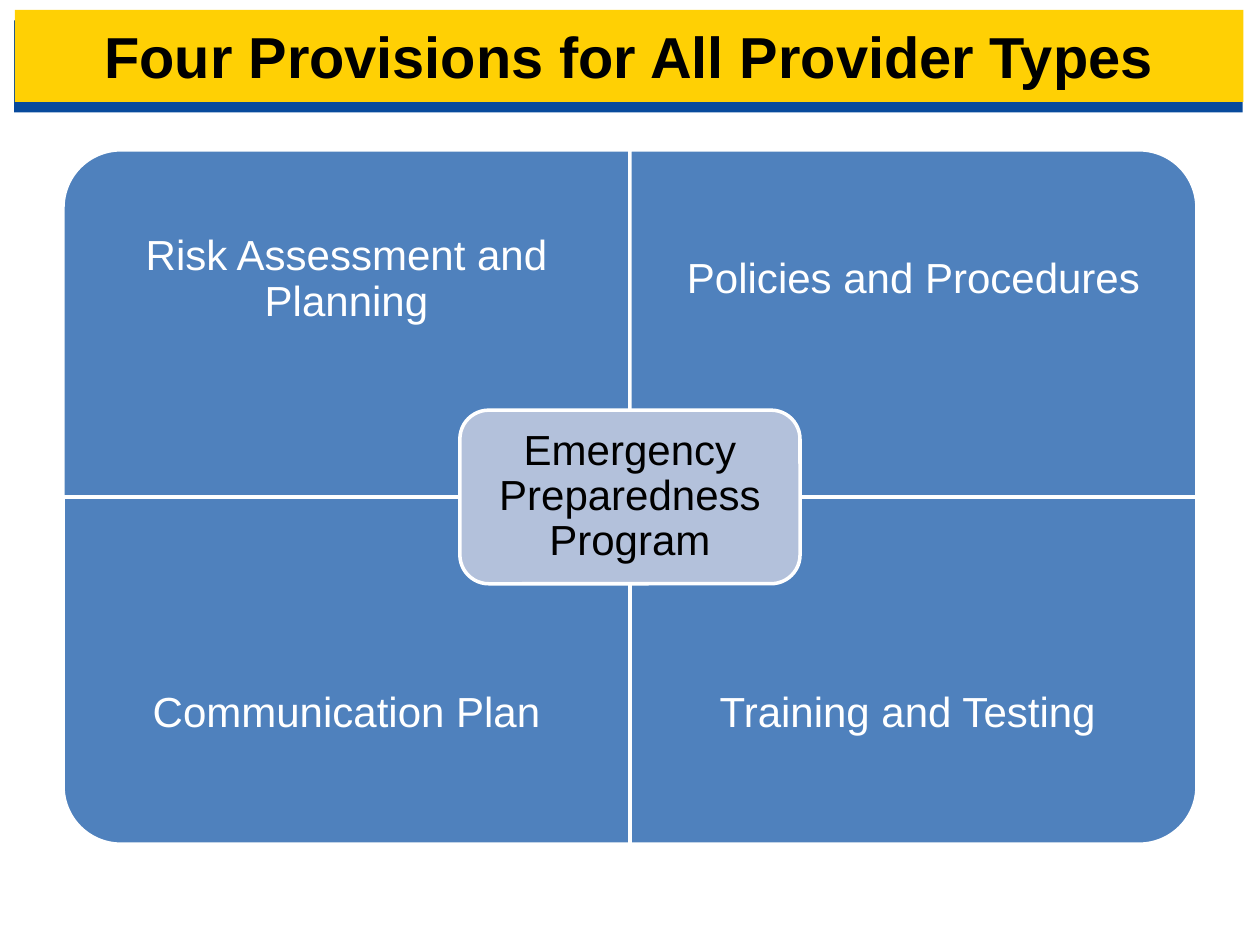
"""Build a slide showing four provisions around an emergency preparedness program."""
from dataclasses import dataclass

from lxml import etree
from pptx import Presentation
from pptx.dml.color import RGBColor
from pptx.enum.shapes import MSO_SHAPE
from pptx.enum.text import MSO_ANCHOR, MSO_AUTO_SIZE, PP_ALIGN
from pptx.oxml.ns import qn
from pptx.util import Pt

CENTER = PP_ALIGN.CENTER
MIDDLE = MSO_ANCHOR.MIDDLE
NO_AUTOFIT = MSO_AUTO_SIZE.NONE
ROUNDED = MSO_SHAPE.ROUNDED_RECTANGLE
ONE_ROUND_CORNER = MSO_SHAPE.ROUND_1_RECTANGLE

YELLOW = RGBColor(0xFF, 0xD0, 0x04)
NAVY = RGBColor(0x08, 0x4A, 0x9C)
BLUE = RGBColor(0x4F, 0x81, 0xBD)
PALE_BLUE = RGBColor(0xB3, 0xC1, 0xDB)
WHITE = RGBColor(0xFF, 0xFF, 0xFF)
BLACK = RGBColor(0x00, 0x00, 0x00)

FONT = "Arial"
GRID_LEFT, GRID_TOP = 36, 85.6
CELL_WIDTH, CELL_HEIGHT = 324, 198.4
LABEL_HEIGHT = CELL_HEIGHT * 0.75
HUB_WIDTH, HUB_HEIGHT = CELL_WIDTH * 0.6, CELL_HEIGHT / 2


@dataclass(frozen=True)
class Provision:
    text: str
    column: int
    row: int
    rotation: int


PROVISIONS = (
    Provision("Risk Assessment and Planning", 0, 0, 270),
    Provision("Policies and Procedures", 1, 0, 0),
    Provision("Communication Plan", 0, 1, 180),
    Provision("Training and Testing ", 1, 1, 90),
)


def write_text(box, text: str, *, size: float, color: RGBColor, bold: bool = False,
               inset: float = 0, line_spacing: float = 1.0) -> None:
    """Write one centred paragraph in a shape."""
    frame = box.text_frame
    frame.word_wrap = True
    frame.auto_size = NO_AUTOFIT
    frame.vertical_anchor = MIDDLE
    frame.margin_left = frame.margin_right = Pt(inset)
    frame.margin_top = frame.margin_bottom = Pt(inset)
    para = frame.paragraphs[0]
    para.alignment = CENTER
    para.line_spacing = line_spacing
    span = para.add_run()
    span.text = text
    span.font.name = FONT
    span.font.size = Pt(size)
    span.font.bold = bold
    span.font.color.rgb = color


def add_panel(page, kind, center_x: float, center_y: float, width: float,
              height: float, fill: RGBColor, rotation: int = 0):
    """Add a white-edged panel, sized as it appears after rotation."""
    if rotation % 180:
        width, height = height, width
    panel = page.shapes.add_shape(kind, Pt(center_x - width / 2), Pt(center_y - height / 2),
                                  Pt(width), Pt(height))
    panel.rotation = rotation
    panel.shadow.inherit = False
    panel.fill.solid()
    panel.fill.fore_color.rgb = fill
    panel.line.color.rgb = WHITE
    panel.line.width = Pt(2)
    return panel


def add_provision(page, provision: Provision) -> None:
    """Add one quadrant and its label along the outer edge."""
    left = GRID_LEFT + provision.column * CELL_WIDTH
    top = GRID_TOP + provision.row * CELL_HEIGHT
    add_panel(page, ONE_ROUND_CORNER, left + CELL_WIDTH / 2, top + CELL_HEIGHT / 2,
              CELL_WIDTH, CELL_HEIGHT, BLUE, provision.rotation)
    label_top = top + provision.row * (CELL_HEIGHT - LABEL_HEIGHT)
    label = page.shapes.add_textbox(Pt(left), Pt(label_top), Pt(CELL_WIDTH), Pt(LABEL_HEIGHT))
    write_text(label, provision.text, size=24, color=WHITE, inset=13.5, line_spacing=0.9)


def add_shadow(box, color: RGBColor, distance: float, degrees: int) -> None:
    """Give a shape a solid offset shadow."""
    effects = etree.SubElement(box.element.spPr, qn("a:effectLst"))
    shadow = etree.SubElement(effects, qn("a:outerShdw"), dist=str(Pt(distance)),
                              dir=str(degrees * 60000), algn="ctr", rotWithShape="0")
    etree.SubElement(shadow, qn("a:srgbClr"), val=str(color))


def format_title(title, text: str) -> None:
    """Turn the title placeholder into the yellow banner."""
    title.left, title.top, title.width, title.height = Pt(8.5), Pt(5.7), Pt(702), Pt(52.5)
    title.fill.solid()
    title.fill.fore_color.rgb = YELLOW
    add_shadow(title, NAVY, 6, 94)
    write_text(title, text, size=33, color=BLACK, bold=True)


def main() -> None:
    """Create and save the deck."""
    deck = Presentation()
    deck.slide_width, deck.slide_height = Pt(720), Pt(540)
    page = deck.slides.add_slide(deck.slide_layouts[5])
    format_title(page.shapes.title, "Four Provisions for All Provider Types")
    for provision in PROVISIONS:
        add_provision(page, provision)
    hub = add_panel(page, ROUNDED, GRID_LEFT + CELL_WIDTH, GRID_TOP + CELL_HEIGHT,
                    HUB_WIDTH, HUB_HEIGHT, PALE_BLUE)
    write_text(hub, "Emergency Preparedness Program", size=24, color=BLACK,
               inset=7, line_spacing=0.9)
    deck.save("out.pptx")


if __name__ == "__main__":
    main()
